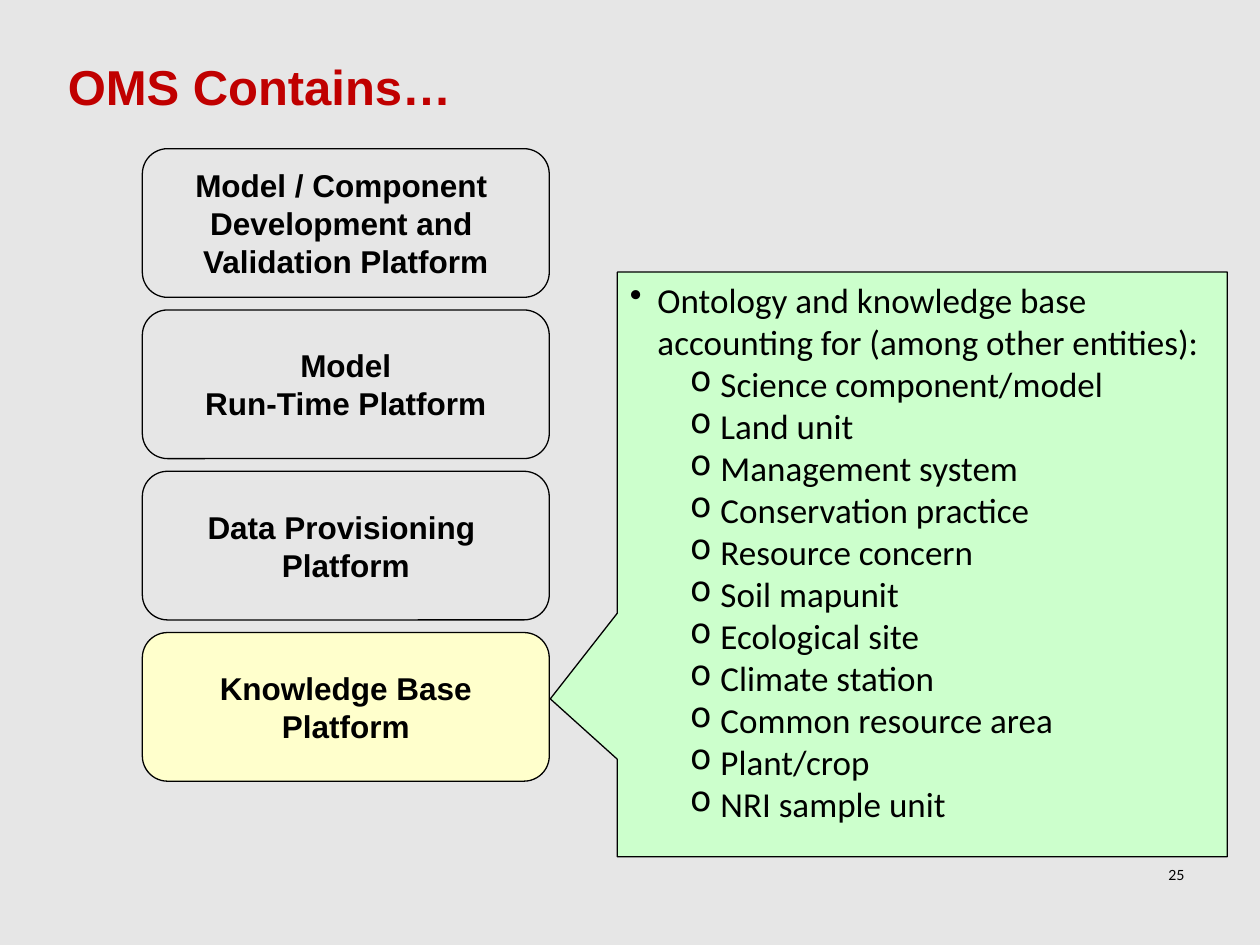
from lxml import etree
from pptx import Presentation
from pptx.dml.color import RGBColor
from pptx.enum import shapes, text
from pptx.oxml import ns
from pptx.util import Inches, Pt

BLACK = RGBColor(0x00, 0x00, 0x00)
RED = RGBColor(0xC0, 0x00, 0x00)
GRAY = RGBColor(0xE6, 0xE6, 0xE6)
YELLOW = RGBColor(0xFF, 0xFF, 0xCC)
GREEN = RGBColor(0xCC, 0xFF, 0xCC)

PLATFORMS = [
    ["Model / Component ", "Development and ", "Validation Platform"],
    ["Model", "Run-Time Platform"],
    ["Data Provisioning ", "Platform"],
    ["Knowledge Base", "Platform"],
]
ONTOLOGY = "Ontology and knowledge base accounting for (among other entities):"
ENTITIES = [
    "Science component/model", "Land unit", "Management system",
    "Conservation practice", "Resource concern", "Soil mapunit",
    "Ecological site", "Climate station", "Common resource area",
    "Plant/crop", "NRI sample unit",
]


def write_lines(frame, lines, size, font, color=BLACK, bold=False,
                align=text.PP_ALIGN.LEFT):
    frame.text = "\n".join(lines)
    for line in frame.paragraphs:
        line.alignment = align
        line.font.size = Pt(size)
        line.font.name = font
        line.font.bold = bold
        line.font.color.rgb = color


def add_label(slide, box, words, size, font, wrap=True, **style):
    frame = slide.shapes.add_textbox(*map(Inches, box)).text_frame
    frame.word_wrap = wrap
    write_lines(frame, [words], size, font, **style)


def add_panel(slide, preset, box, fill, adjustments):
    panel = slide.shapes.add_shape(preset, *map(Inches, box))
    panel.shadow.inherit = False
    panel.fill.solid()
    panel.fill.fore_color.rgb = fill
    panel.line.color.rgb = BLACK
    panel.line.width = Pt(0.75)
    for index, value in enumerate(adjustments):
        panel.adjustments[index] = value
    return panel


def add_platform(slide, top, lines, fill):
    platform = add_panel(slide, shapes.MSO_SHAPE.ROUNDED_RECTANGLE,
                         (1.13, top, 3.23, 1.18), fill, [0.17])
    frame = platform.text_frame
    frame.word_wrap = False
    frame.vertical_anchor = text.MSO_ANCHOR.MIDDLE
    write_lines(frame, lines, 18, "Arial", bold=True,
                align=text.PP_ALIGN.CENTER)


def set_bullet(line, mark, margin):
    properties = line._p.get_or_add_pPr()
    properties.set("marL", str(Inches(margin)))
    properties.set("indent", str(Inches(-0.24)))
    etree.SubElement(properties, ns.qn("a:buChar")).set("char", mark)


def add_knowledge_callout(slide):
    callout = add_panel(slide, shapes.MSO_SHAPE.RECTANGULAR_CALLOUT,
                        (4.9, 2.16, 4.84, 4.64), GREEN, [-0.61, 0.23])
    frame = callout.text_frame
    frame.word_wrap = True
    frame.vertical_anchor = text.MSO_ANCHOR.TOP
    write_lines(frame, [ONTOLOGY, *ENTITIES], 20, "Calibri")
    heading, *entities = frame.paragraphs
    set_bullet(heading, "•", 0.22)
    for entity in entities:
        entity.level = 1
        set_bullet(entity, "o", 0.72)


def main():
    deck = Presentation()
    deck.slide_width, deck.slide_height = Inches(10), Inches(7.5)
    slide = deck.slides.add_slide(deck.slide_layouts[6])
    slide.background.fill.solid()
    slide.background.fill.fore_color.rgb = GRAY

    # Title
    add_label(slide, (0.44, 0.4, 4.03, 0.57), "OMS Contains…", 28, "Arial",
              wrap=False, color=RED, bold=True)

    # Platform stack, with the last one highlighted
    for row, lines in enumerate(PLATFORMS):
        fill = YELLOW if row == len(PLATFORMS) - 1 else GRAY
        add_platform(slide, 1.18 + 1.28 * row, lines, fill)

    # Details of the knowledge base
    add_knowledge_callout(slide)

    # Page number
    add_label(slide, (7.17, 6.83, 2.33, 0.52), "25", 8, "Lato",
              align=text.PP_ALIGN.RIGHT)

    deck.save("out.pptx")


if __name__ == "__main__":
    main()
